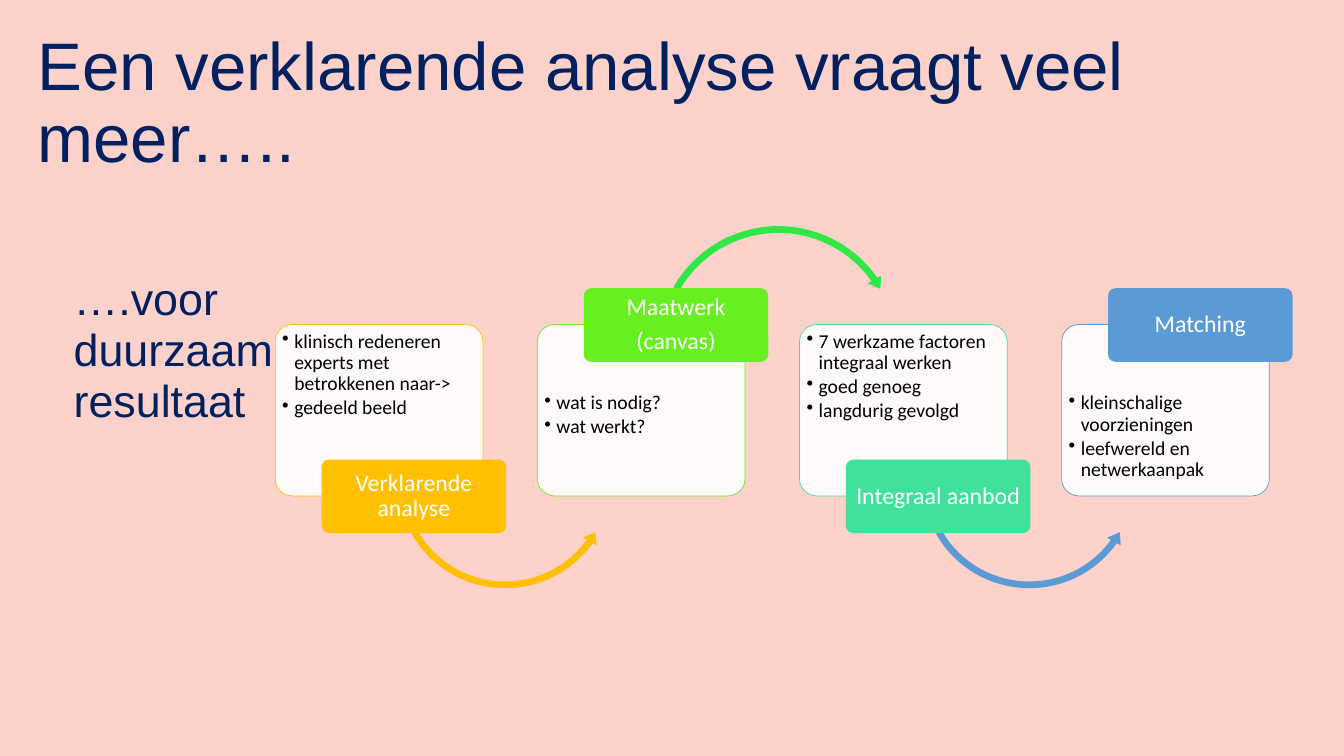
from dataclasses import dataclass

from lxml.etree import SubElement
from pptx import Presentation
from pptx.dml.color import RGBColor
from pptx.enum.shapes import MSO_SHAPE as Kind
from pptx.enum.text import MSO_ANCHOR as Anchor, MSO_AUTO_SIZE as Fit, PP_ALIGN as Align
from pptx.oxml.ns import qn
from pptx.util import Inches, Pt


@dataclass(frozen=True)
class Theme:
    back: str = "FCD2CA"
    navy: str = "002060"
    white: str = "FFFFFF"
    black: str = "000000"
    head: str = "Arial"
    body: str = "Calibri"
    title: int = 48
    sub: int = 32
    tag: int = 17
    item: int = 14


@dataclass(frozen=True)
class Step:
    label: tuple[str, ...]
    items: tuple[str, ...]
    color: str
    arrow: str | None = None


@dataclass(frozen=True)
class Arc:
    kind: Kind
    dx: float
    top: float
    size: float
    adjust: tuple[float, ...]


THEME = Theme()
STEPS = (
    Step(("Verklarende analyse",),
         ("klinisch redeneren experts met betrokkenen naar->", "gedeeld beeld"),
         "FFC000", "FFC000"),
    Step(("Maatwerk", "(canvas)"), ("wat is nodig?", "wat werkt?"),
         "67EF21", "30E845"),
    Step(("Integraal aanbod",),
         ("7 werkzame factoren integraal werken", "goed genoeg", "langdurig gevolgd"),
         "3FE19B", "5B9BD5"),
    Step(("Matching",),
         ("kleinschalige voorzieningen", "leefwereld en netwerkaanpak"),
         "5B9BD5"),
)
LOW = Arc(Kind.LEFT_CIRCULAR_ARROW, 1.17, 3.66, 2.22,
          (0.03, 3.669, 21.424, 90.245, 0.035))
HIGH = Arc(Kind.CIRCULAR_ARROW, 1.15, 2.2, 2.48,
           (0.027, 3.258, 194.986, 125.755, 0.031))
LEFT, PITCH = 2.73, 2.6


def style(par, font: str, size: int, color: str) -> None:
    par.font.name = font
    par.font.size = Pt(size)
    par.font.color.rgb = RGBColor.from_string(color)


def frame(shape, x: float, y: float, anchor: Anchor):
    """Set the text insets, wrapping and anchor of a shape."""
    text = shape.text_frame
    text.auto_size = Fit.NONE
    text.word_wrap = True
    text.vertical_anchor = anchor
    text.margin_left = text.margin_right = Inches(x)
    text.margin_top = text.margin_bottom = Inches(y)
    return text


def heading(shape, words: str, size: int, space: float) -> None:
    text = frame(shape, 0, 0, Anchor.TOP)
    text.text = words
    par = text.paragraphs[0]
    par.alignment = Align.LEFT
    par.line_spacing = space
    style(par, THEME.head, size, THEME.navy)


def fill(text, lines: tuple[str, ...], size: int, color: str,
         align: Align, after: int, bullet: bool) -> None:
    """Write one paragraph per line."""
    text.text = "\n".join(lines)
    for par in text.paragraphs:
        par.alignment = align
        par.line_spacing = 0.9
        par.space_after = Pt(after)
        if bullet:
            props = par._p.get_or_add_pPr()
            props.set("marL", str(Inches(0.12)))
            props.set("indent", str(-Inches(0.12)))
            SubElement(props, qn("a:buChar")).set("char", "•")
        style(par, THEME.body, size, color)


def block(slide, kind: Kind, left: float, top: float, width: float,
          height: float, color: str, adjust: tuple[float, ...]):
    """Draw a flat shape without an outline."""
    shape = slide.shapes.add_shape(
        kind, Inches(left), Inches(top), Inches(width), Inches(height))
    shape.shadow.inherit = False
    shape.fill.solid()
    shape.fill.fore_color.rgb = RGBColor.from_string(color)
    shape.line.fill.background()
    for i, value in enumerate(adjust):
        shape.adjustments[i] = value
    return shape


def draw(slide, step: Step, left: float, low: bool) -> None:
    # Card with bullets
    card = block(slide, Kind.ROUNDED_RECTANGLE, left, 3.22, 2.06, 1.7,
                 THEME.white, (0.1,))
    tint = card.fill._xPr.find(".//" + qn("a:srgbClr"))
    SubElement(tint, qn("a:alpha")).set("val", "90000")
    card.line.color.rgb = RGBColor.from_string(step.color)
    card.line.width = Pt(0.5)
    text = frame(card, 0.02, 0.02, Anchor.TOP)
    text.margin_top = Inches(0.02 if low else 0.63)
    fill(text, step.items, THEME.item, THEME.black, Align.LEFT, 2, True)

    # Arrow to the next step
    if step.arrow:
        arc = LOW if low else HIGH
        block(slide, arc.kind, left + arc.dx, arc.top, arc.size, arc.size,
              step.arrow, arc.adjust)

    # Tag over the card edge
    tag = block(slide, Kind.ROUNDED_RECTANGLE, left + 0.46, 4.56 if low else 2.86,
                1.83, 0.73, step.color, (0.1,))
    fill(frame(tag, 0.04, 0.02, Anchor.MIDDLE), step.label, THEME.tag,
         THEME.white, Align.CENTER, 6, False)


def main() -> None:
    deck = Presentation()
    deck.slide_width, deck.slide_height = Inches(13.33), Inches(7.5)
    slide = deck.slides.add_slide(deck.slide_layouts[5])
    slide.background.fill.solid()
    slide.background.fill.fore_color.rgb = RGBColor.from_string(THEME.back)

    # Title and side text
    title = slide.shapes.title
    title.left, title.top = Inches(0.37), Inches(0.32)
    title.width, title.height = Inches(10.87), Inches(4.56)
    heading(title, "Een verklarende analyse vraagt veel meer…..", THEME.title, 0.9)
    side = slide.shapes.add_textbox(
        Inches(0.73), Inches(2.72), Inches(2.72), Inches(2.07))
    heading(side, "….voor duurzaam resultaat", THEME.sub, 0.95)

    # Steps, with tags low and high in turn
    for i, step in enumerate(STEPS):
        draw(slide, step, LEFT + i * PITCH, i % 2 == 0)

    deck.save("out.pptx")


if __name__ == "__main__":
    main()
